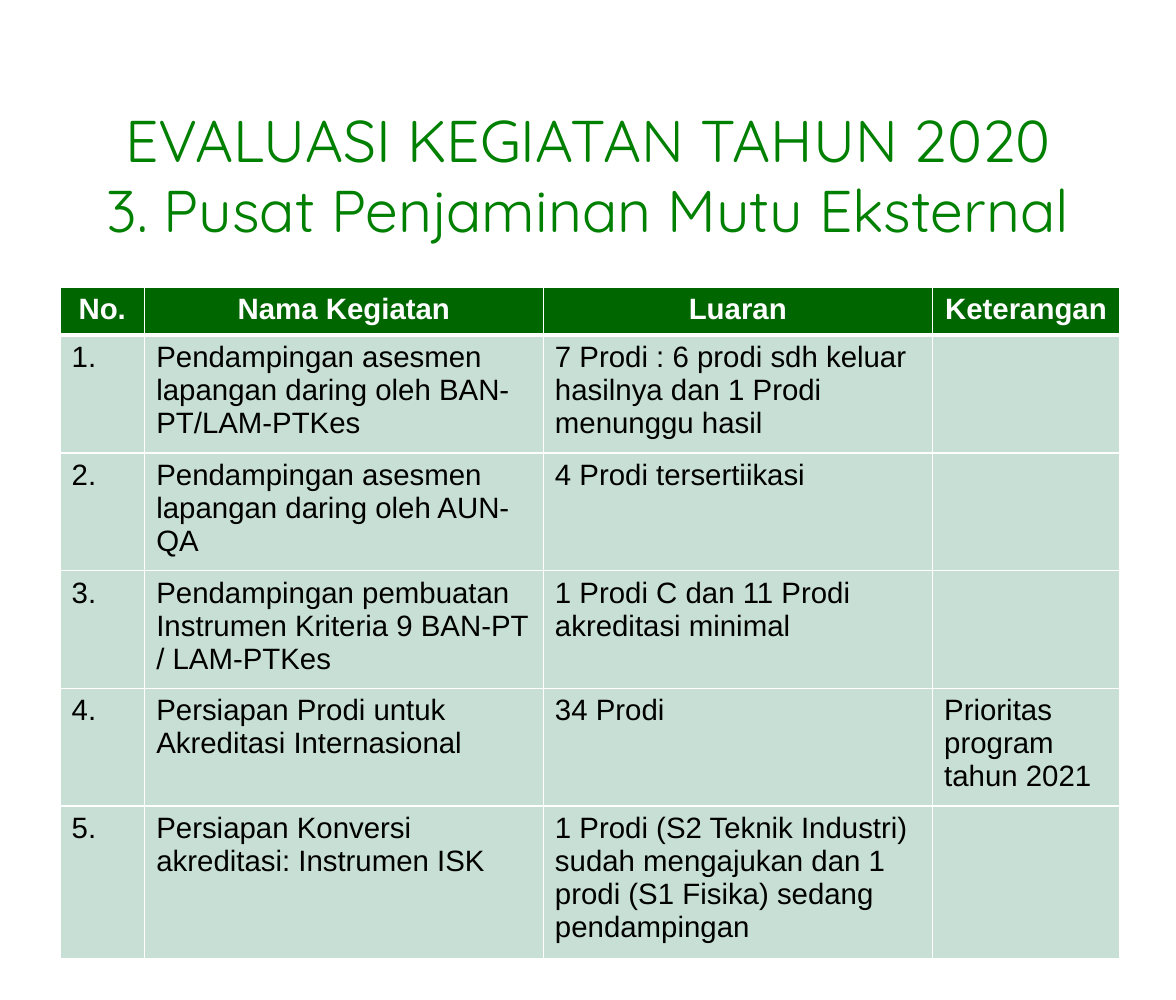
from lxml.etree import SubElement as Sub
from pptx import Presentation
from pptx.dml.color import RGBColor
from pptx.enum.text import MSO_ANCHOR as Anchor, PP_ALIGN as Align
from pptx.oxml.ns import qn
from pptx.util import Inches, Pt

WHITE = RGBColor(0xFF, 0xFF, 0xFF)
BLACK = RGBColor(0x00, 0x00, 0x00)
GREEN = RGBColor(0x00, 0x80, 0x00)
DARK = RGBColor(0x00, 0x66, 0x00)
PALE = RGBColor(0xC7, 0xDF, 0xD4)

TITLE = {"name": "Quicksand", "size": Pt(36)}
HEAD = {"name": "Arial", "size": Pt(18), "bold": True}
BODY = {"name": "Arial", "size": Pt(18), "bold": False}

COLS = [0.72, 3.39, 3.31, 1.59]
TALL = [0.41, 1, 1, 1, 1, 1.3]
ROWS = [
    ["No.", "Nama Kegiatan", "Luaran", "Keterangan"],
    ["1.", "Pendampingan asesmen lapangan daring oleh BAN-PT/LAM-PTKes",
     "7 Prodi : 6 prodi sdh keluar hasilnya dan 1 Prodi menunggu hasil", ""],
    ["2.", "Pendampingan asesmen lapangan daring oleh AUN-QA",
     "4 Prodi tersertiikasi", ""],
    ["3.", "Pendampingan pembuatan Instrumen Kriteria 9 BAN-PT / LAM-PTKes",
     "1 Prodi C dan 11 Prodi akreditasi minimal", ""],
    ["4.", "Persiapan Prodi untuk Akreditasi Internasional",
     "34 Prodi", "Prioritas program tahun 2021"],
    ["5.", "Persiapan Konversi akreditasi: Instrumen ISK",
     "1 Prodi (S2 Teknik Industri) sudah mengajukan dan 1 prodi (S1 Fisika) "
     "sedang pendampingan", ""],
]


def style(para, form, color, align):
    para.alignment = align
    for key, value in form.items():
        setattr(para.font, key, value)
    para.font.color.rgb = color


def border(cell, widths):
    props = cell._tc.get_or_add_tcPr()
    for side, width in widths.items():
        line = Sub(props, qn(f"a:{side}"), w=str(Pt(width)))
        fill = Sub(line, qn("a:solidFill"))
        Sub(fill, qn("a:srgbClr"), val=str(WHITE))


def add_title(slide, box):
    frame = slide.shapes.add_textbox(*map(Inches, box)).text_frame
    frame.word_wrap = True
    frame.vertical_anchor = Anchor.MIDDLE
    para = frame.paragraphs[0]
    para.text = "EVALUASI KEGIATAN TAHUN 2020\v3. Pusat Penjaminan Mutu Eksternal"
    style(para, TITLE, GREEN, Align.CENTER)


def add_grid(slide, box):
    table = slide.shapes.add_table(len(ROWS), len(COLS), *map(Inches, box)).table
    for col, width in zip(table.columns, COLS):
        col.width = Inches(width)
    for r, (row, height) in enumerate(zip(ROWS, TALL)):
        table.rows[r].height = Inches(height)
        for c, text in enumerate(row):
            cell = table.cell(r, c)
            border(cell, {"lnL": 1, "lnR": 1, "lnT": 3 if r == 1 else 1,
                          "lnB": 3 if r == 0 else 1})
            cell.fill.solid()
            cell.fill.fore_color.rgb = PALE if r else DARK
            cell.text = text
            look = (BODY, BLACK, Align.LEFT) if r else (HEAD, WHITE, Align.CENTER)
            style(cell.text_frame.paragraphs[0], *look)


def main():
    deck = Presentation()
    deck.slide_width, deck.slide_height = Inches(10), Inches(8.5)
    slide = deck.slides.add_slide(deck.slide_layouts[6])
    add_title(slide, (0.5, 0.77, 9, 1.42))
    add_grid(slide, (0.51, 2.44, sum(COLS), sum(TALL)))
    deck.save("out.pptx")


if __name__ == "__main__":
    main()
